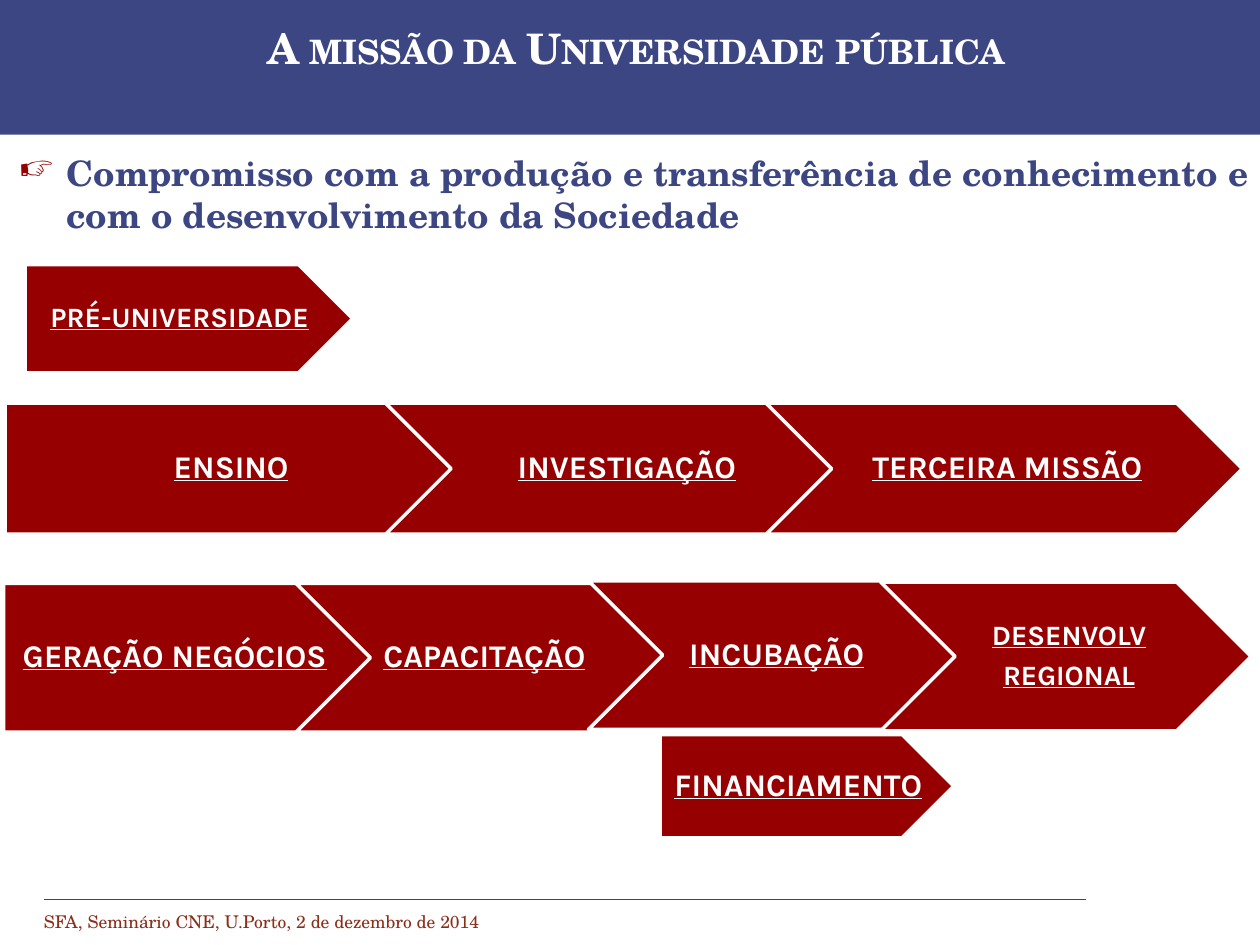
import pptx
import pptx.util
import pptx.oxml
import pptx.oxml.ns
import pptx.dml.color
import pptx.enum.shapes
import pptx.enum.text
from pptx.util import Inches

COLORS = {"blue": "3C4682", "red": "960000", "rust": "8C2D19", "white": "FFFFFF"}
SERIF, SANS = "TeX Gyre Schola", "Karla"
SHAPE = pptx.enum.shapes.MSO_SHAPE
ALIGN = pptx.enum.text.PP_ALIGN
ANCHOR = pptx.enum.text.MSO_ANCHOR

TITLE = "A missão da Universidade pública"
COMMITMENT = ("Compromisso com a produção e transferência de conhecimento "
              "e com o desenvolvimento da Sociedade")
FOOTER = "SFA, Seminário CNE, U.Porto, 2 de dezembro de 2014"
ROWS = [
    {"at": (0.04, 3.2), "size": (3.78, 1.04), "step": 3.02,
     "steps": [("ENSINO", 18, 0), ("INVESTIGAÇÃO", 18, 0), ("TERCEIRA MISSÃO", 18, 0)]},
    {"at": (0.2, 2.1), "size": (2.6, 0.86), "step": 0,
     "steps": [("PRÉ-UNIVERSIDADE", 16, 0)]},
    {"at": (5.24, 5.83), "size": (2.33, 0.82), "step": 0,
     "steps": [("FINANCIAMENTO", 18, 0)]},
    {"at": (0.03, 4.63), "size": (2.94, 1.18), "step": 2.32,
     "steps": [("GERAÇÃO NEGÓCIOS", 18, 0), ("CAPACITAÇÃO", 18, 0),
               ("INCUBAÇÃO", 18, -0.02), ("DESENVOLV\nREGIONAL", 16, -0.01)]},
]


def rgb(name):
    return pptx.dml.color.RGBColor.from_string(COLORS[name])


def child(parent, tag, **attrs):
    el = pptx.oxml.ns.qn(tag)
    sub = parent.makeelement(el, attrs)
    parent.append(sub)
    return sub


def write(tf, text, size, font, color, bold=False, underline=False, align=ALIGN.LEFT,
          anchor=ANCHOR.TOP, insets=(0.1, 0.05, 0.1, 0.05), spacing=None, after=0,
          bullet=None, small_caps=False):
    tf.word_wrap = True
    tf.auto_size = pptx.enum.text.MSO_AUTO_SIZE.NONE
    tf.vertical_anchor = anchor
    tf.margin_left, tf.margin_top, tf.margin_right, tf.margin_bottom = map(Inches, insets)
    for i, line in enumerate(text.split("\n")):
        p = tf.add_paragraph() if i else tf.paragraphs[0]
        p.alignment = align
        p.line_spacing = spacing
        p.space_before = pptx.util.Pt(0)
        p.space_after = pptx.util.Pt(after)
        if bullet:
            pPr = p._p.get_or_add_pPr()
            pPr.set("marL", str(Inches(0.38)))
            pPr.set("indent", str(Inches(-0.38)))
            child(child(pPr, "a:buClr"), "a:srgbClr", val=COLORS["red"])
            child(pPr, "a:buChar", char=bullet)
        r = p.add_run()
        r.text = line
        r.font.size = pptx.util.Pt(size)
        r.font.name = font
        r.font.bold = bold
        r.font.underline = underline
        r.font.color.rgb = rgb(color)
        if small_caps:
            r._r.get_or_add_rPr().set("cap", "small")


def add_block(s, kind, box, fill, line=None):
    sp = s.shapes.add_shape(kind, *map(Inches, box))
    sp.shadow.inherit = False
    sp.fill.solid()
    sp.fill.fore_color.rgb = rgb(fill)
    if line:
        sp.line.color.rgb = rgb(line)
        sp.line.width = pptx.util.Pt(2)
    else:
        sp.line.fill.background()
    return sp


def add_row(s, row):
    (left, top), (width, height) = row["at"], row["size"]
    for i, (text, size, shift) in enumerate(row["steps"]):
        kind = SHAPE.CHEVRON if i else SHAPE.PENTAGON
        box = (left + i * row["step"], top + shift, width, height)
        sp = add_block(s, kind, box, "red", "white")
        write(sp.text_frame, text, size, SANS, "white", bold=True, underline=True,
              align=ALIGN.CENTER, anchor=ANCHOR.MIDDLE, spacing=0.9, after=0.35 * size,
              insets=(0.08 if i else 0.1, 0.05, 0.03, 0.05))


def add_text(s, box, text, *args, **kwargs):
    sp = s.shapes.add_textbox(*map(Inches, box))
    write(sp.text_frame, text, *args, **kwargs)


def main():
    prs = pptx.Presentation()
    prs.slide_width, prs.slide_height = Inches(10), Inches(7.5)
    s = prs.slides.add_slide(prs.slide_layouts[5])

    title = s.shapes.title
    title.left, title.top, title.width, title.height = map(Inches, (0, 0.13, 10.1, 0.66))
    write(title.text_frame, TITLE, 24, SERIF, "white", bold=True,
          align=ALIGN.CENTER, small_caps=True)
    banner = add_block(s, SHAPE.RECTANGLE, (0, 0, 10, 1.07), "blue")
    title.element.addprevious(banner.element)

    add_text(s, (0.25, 7.18, 6.56, 0.28), FOOTER, 10, SERIF, "rust")
    rule = s.shapes.add_connector(pptx.enum.shapes.MSO_CONNECTOR.STRAIGHT,
                                  *map(Inches, (0.35, 7.14, 8.62, 7.14)))
    rule.line.color.rgb = rgb("rust")
    rule.line.width = pptx.util.Pt(0.75)
    child(rule._element.spPr, "a:effectLst")

    add_text(s, (0.05, 1.15, 10, 0.8), COMMITMENT, 20, SERIF, "blue", bold=True,
             spacing=pptx.util.Pt(24), after=12, bullet="☞")
    for row in ROWS:
        add_row(s, row)
    prs.save("out.pptx")


if __name__ == "__main__":
    main()
